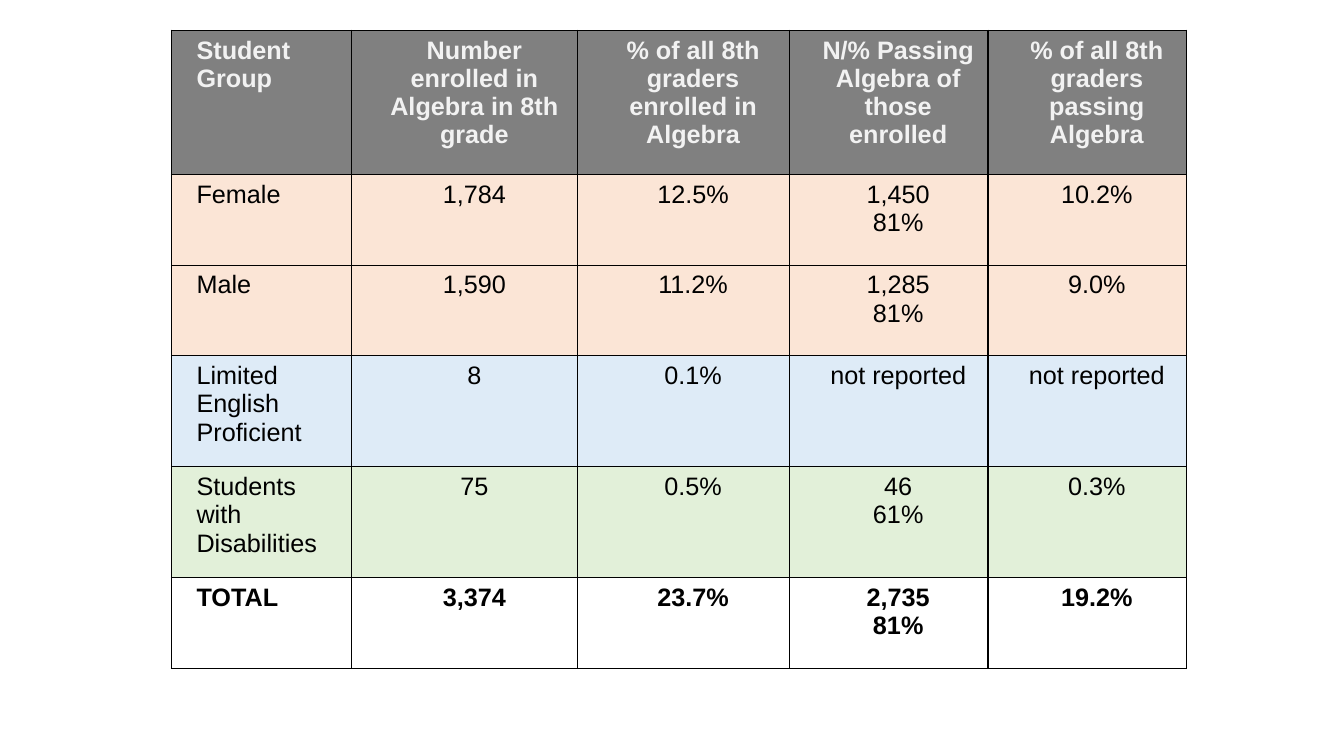
import dataclasses

import lxml.etree
import pptx
import pptx.dml.color
import pptx.enum.text
import pptx.oxml.ns
import pptx.util


@dataclasses.dataclass(frozen=True)
class Theme:
    font: str = "Arial"
    size: float = 18
    header_text: str = "F2F2F2"
    text: str = "000000"
    header: str = "808080"
    gender: str = "FBE5D6"
    language: str = "DEEBF7"
    disability: str = "E2F0D9"
    total: str = "FFFFFF"
    border: str = "000000"
    border_width: float = 1
    inset: float = 0.06
    indent: float = 0.19


THEME = Theme()
WIDTH, HEIGHT = pptx.util.Inches(13.33), pptx.util.Inches(7.5)
GRID = 100

COLUMNS = [13.43, 16.8, 15.75, 14.78, 14.78]
ROWS = [
    (19.07, THEME.header, ["Student Group", "Number enrolled in Algebra in 8th grade",
                           "% of all 8th graders enrolled in Algebra",
                           "N/% Passing Algebra of those enrolled",
                           "% of all 8th graders passing Algebra"]),
    (12, THEME.gender, ["Female", "1,784", "12.5%", "1,450\n81%", "10.2%"]),
    (12, THEME.gender, ["Male", "1,590", "11.2%", "1,285\n81%", "9.0%"]),
    (14.67, THEME.language, ["Limited English Proficient", "8", "0.1%",
                             "not reported", "not reported"]),
    (14.67, THEME.disability, ["Students with Disabilities", "75", "0.5%", "46\n61%", "0.3%"]),
    (12, THEME.total, ["TOTAL", "3,374", "23.7%", "2,735\n81%", "19.2%"]),
]


def across(columns):
    return round(WIDTH * columns / GRID)


def down(rows):
    return round(HEIGHT * rows / GRID)


def rgb(color):
    return pptx.dml.color.RGBColor.from_string(color)


def add_borders(cell):
    qn = pptx.oxml.ns.qn
    tc_pr = cell._tc.get_or_add_tcPr()
    for i, side in enumerate(("a:lnL", "a:lnR", "a:lnT", "a:lnB")):
        ln = lxml.etree.Element(qn(side), w=str(pptx.util.Pt(THEME.border_width)))
        fill = lxml.etree.SubElement(ln, qn("a:solidFill"))
        lxml.etree.SubElement(fill, qn("a:srgbClr"), val=THEME.border)
        tc_pr.insert(i, ln)


def fill_cell(cell, text, fill, color, bold, align):
    inset = pptx.util.Inches(THEME.inset)
    cell.margin_left = cell.margin_right = inset
    cell.margin_top = cell.margin_bottom = inset
    cell.fill.solid()
    cell.fill.fore_color.rgb = rgb(fill)
    add_borders(cell)
    cell.text_frame.text = text
    for p in cell.text_frame.paragraphs:
        p_pr = p._p.get_or_add_pPr()
        p_pr.set("marL", str(pptx.util.Inches(THEME.indent)))
        p_pr.set("indent", "0")
        p.alignment = align
        p.font.name = THEME.font
        p.font.size = pptx.util.Pt(THEME.size)
        p.font.bold = bold
        p.font.color.rgb = rgb(color)


def add_enrollment_table(s, left, top):
    height = sum(row[0] for row in ROWS)
    table = s.shapes.add_table(len(ROWS), len(COLUMNS), across(left), down(top),
                               across(sum(COLUMNS)), down(height)).table
    table.horz_banding = False
    for column, width in zip(table.columns, COLUMNS):
        column.width = across(width)
    for i, (row_height, fill, texts) in enumerate(ROWS):
        table.rows[i].height = down(row_height)
        color = THEME.header_text if i == 0 else THEME.text
        bold = i in (0, len(ROWS) - 1)
        for j, text in enumerate(texts):
            align = pptx.enum.text.PP_ALIGN.CENTER if j else pptx.enum.text.PP_ALIGN.LEFT
            fill_cell(table.cell(i, j), text, fill, color, bold, align)


def main():
    prs = pptx.Presentation()
    prs.slide_width, prs.slide_height = WIDTH, HEIGHT
    s = prs.slides.add_slide(prs.slide_layouts[6])
    add_enrollment_table(s, left=12.75, top=4)
    prs.save("out.pptx")


if __name__ == "__main__":
    main()
